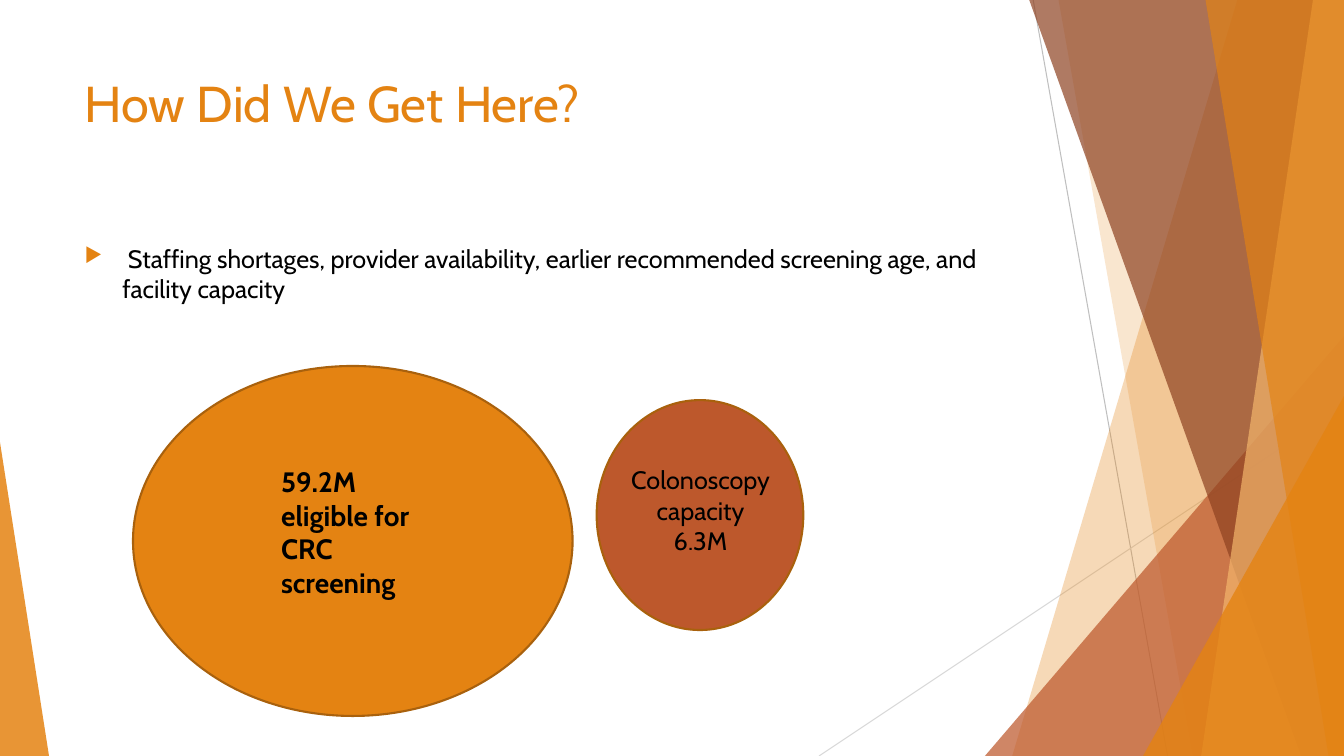
from dataclasses import dataclass

from lxml.etree import SubElement
from pptx import Presentation
from pptx.dml.color import RGBColor as RGB
from pptx.enum.shapes import MSO_CONNECTOR as Link, MSO_SHAPE as Form
from pptx.enum.text import MSO_ANCHOR as Anchor, MSO_AUTO_SIZE as Fit, PP_ALIGN as Align
from pptx.oxml.ns import qn
from pptx.util import Pt


@dataclass(frozen=True)
class Theme:
    font: str = "Cabin"
    main: str = "E48312"
    rust: str = "BD582C"
    brown: str = "8E4221"
    peach: str = "F3B56C"
    edge: str = "A9610D"
    text: str = "000000"
    gray: str = "BFBFBF"
    pale: str = "D9D9D9"
    title: int = 36
    large: int = 20
    body: int = 18


WIDE, HIGH = 960, 540


class Deck:
    def __init__(self, theme):
        self.theme = theme
        self.prs = Presentation()
        self.prs.slide_width, self.prs.slide_height = Pt(WIDE), Pt(HIGH)
        self.slide = self.prs.slides.add_slide(self.prs.slide_layouts[5])
        self.shapes = self.slide.shapes

    def paint(self, shape, color, alpha=100, edge=None):
        shape.shadow.inherit = False
        shape.fill.solid()
        shape.fill.fore_color.rgb = RGB.from_string(color)
        if alpha < 100:
            tint = shape._element.spPr.find(qn("a:solidFill"))[0]
            SubElement(tint, qn("a:alpha"), val=str(alpha * 1000))
        if edge:
            shape.line.color.rgb = RGB.from_string(edge)
            shape.line.width = Pt(1.5)
        else:
            shape.line.fill.background()

    def line(self, x1, y1, x2, y2, color):
        link = self.shapes.add_connector(Link.STRAIGHT, Pt(x1), Pt(y1), Pt(x2), Pt(y2))
        link.line.color.rgb = RGB.from_string(color)
        link.line.width = Pt(0.75)
        SubElement(link._element.spPr, qn("a:effectLst"))

    def band(self, top, base, color, alpha):
        """Slanted left edge, filled out to the right side of the slide."""
        pen = self.shapes.build_freeform(Pt(top), Pt(-0.6))
        pen.add_line_segments(
            [(Pt(x), Pt(y)) for x, y in ((WIDE, -0.6), (WIDE, HIGH), (base, HIGH))])
        self.paint(pen.convert_to_shape(), color, alpha)

    def wedge(self, left, top, width, tip, color, alpha):
        """Triangle standing on the bottom of the slide."""
        shape = self.shapes.add_shape(
            Form.ISOSCELES_TRIANGLE, Pt(left), Pt(top), Pt(width), Pt(HIGH - top))
        shape.adjustments[0] = tip
        self.paint(shape, color, alpha)

    def oval(self, left, top, width, height, color):
        shape = self.shapes.add_shape(Form.OVAL, Pt(left), Pt(top), Pt(width), Pt(height))
        self.paint(shape, color, edge=self.theme.edge)

    def label(self, shape, text, size, color, bold=False, align=Align.LEFT):
        frame = shape.text_frame
        frame.word_wrap = True
        frame.auto_size = Fit.NONE
        frame.vertical_anchor = Anchor.TOP
        para = frame.paragraphs[0]
        para.alignment = align
        run = para.add_run()
        run.text = text
        run.font.name, run.font.size, run.font.bold = self.theme.font, Pt(size), bold
        run.font.color.rgb = RGB.from_string(color)
        return para

    def title(self, text, left, top, width, height):
        shape = self.shapes.title
        shape.left, shape.top = Pt(left), Pt(top)
        shape.width, shape.height = Pt(width), Pt(height)
        self.label(shape, text, self.theme.title, self.theme.main)

    def text(self, text, left, top, width, height, size, **style):
        box = self.shapes.add_textbox(Pt(left), Pt(top), Pt(width), Pt(height))
        return self.label(box, text, size, self.theme.text, **style)

    def bullet(self, para, indent):
        para.space_before = Pt(10)
        props = para._p.get_or_add_pPr()
        props.set("marL", str(Pt(indent)))
        props.set("indent", str(-Pt(indent)))
        tint = SubElement(props, qn("a:buClr"))
        SubElement(tint, qn("a:srgbClr"), val=self.theme.main)
        SubElement(props, qn("a:buSzPct"), val="80000")
        SubElement(props, qn("a:buChar"), char="▶")


def main():
    look = Theme()
    deck = Deck(look)

    # Backdrop of thin lines, bands and wedges
    deck.line(738, 0, 834, HIGH, look.gray)
    deck.line(WIDE, 290, 585, HIGH, look.pale)
    deck.band(884, 723, look.main, 30)
    deck.band(756, 852, look.main, 20)
    deck.wedge(703.5, 240, 256.5, 1, look.rust, 72)
    deck.band(735, 929.5, look.brown, 70)
    deck.band(938, 858, look.peach, 70)
    deck.band(861, 949, look.main, 65)
    deck.wedge(816.5, 283, 143.5, 1, look.main, 80)
    deck.wedge(0, 316, 35, 0, look.main, 85)

    # Title and bullet
    deck.title("How Did We Get Here?", 53.3, 48, 677, 104)
    para = deck.text(
        " Staffing shortages, provider availability, earlier recommended "
        "screening age, and facility capacity", 53.3, 170, 677, 305, look.body)
    deck.bullet(para, 27)

    # Demand against capacity
    deck.oval(95, 261.4, 314, 250, look.main)
    deck.text("59.2M eligible for CRC screening", 193.7, 328.3, 116.6, 104.4,
              look.large, bold=True)
    deck.oval(426.2, 285.8, 147.6, 164.2, look.rust)
    deck.text("Colonoscopy capacity 6.3M", 443.5, 328.3, 113.8, 72.7,
              look.body, align=Align.CENTER)

    deck.prs.save("out.pptx")


if __name__ == "__main__":
    main()
